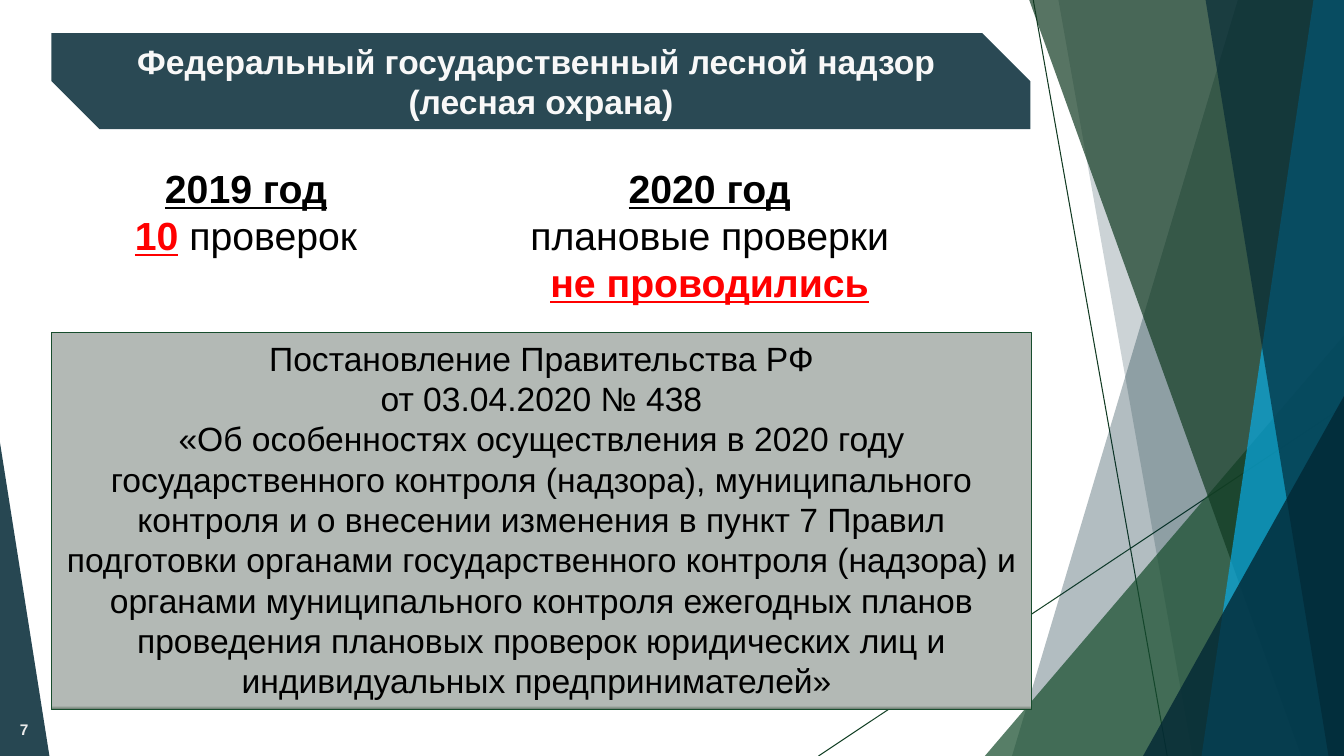
from dataclasses import dataclass

from lxml import etree
from pptx import Presentation
from pptx.dml.color import RGBColor as RGB
from pptx.enum.shapes import MSO_CONNECTOR as CONN, MSO_SHAPE as SHAPE
from pptx.enum.text import MSO_ANCHOR as ANCHOR, MSO_AUTO_SIZE as FIT, PP_ALIGN as ALIGN
from pptx.oxml.ns import qn
from pptx.util import Inches, Pt


@dataclass(frozen=True)
class Theme:
    font: str = "Arial"
    navy: str = "022734"
    green: str = "174D2D"
    deep: str = "113A22"
    mid: str = "144126"
    blue: str = "09ABE4"
    panel: str = "B3B9B5"
    panel_edge: str = "5F7264"
    ink: str = "000000"
    accent: str = "FF0000"
    pale: str = "F8F8F8"
    number: str = "EBEBEB"
    big: int = 28
    body: int = 24
    small: int = 11


def add_run(p, text, *, font, size, color, strong=False, underline=False):
    r = p.add_run()
    r.text = text
    r.font.name, r.font.size = font, Pt(size)
    r.font.bold, r.font.underline = strong, underline
    r.font.color.rgb = RGB.from_string(color)


class Deck:
    """Draws on one slide; every length is a percentage of the slide's size."""

    def __init__(self, theme):
        self.theme = theme
        self.prs = Presentation()
        self.prs.slide_width, self.prs.slide_height = Inches(13.33), Inches(7.5)
        self.slide = self.prs.slides.add_slide(self.prs.slide_layouts[6])
        self.shapes = self.slide.shapes

    def at(self, *shares):
        """Turn alternating horizontal and vertical shares into lengths."""
        sides = self.prs.slide_width, self.prs.slide_height
        return [round(share * sides[i % 2] / 100) for i, share in enumerate(shares)]

    def paint(self, sp, color, opacity):
        sp.shadow.inherit = False
        sp.line.fill.background()
        sp.fill.solid()
        sp.fill.fore_color.rgb = RGB.from_string(color)
        clr = sp._element.spPr.find(qn("a:solidFill"))[0]
        etree.SubElement(clr, qn("a:alpha"), val=str(opacity * 1000))

    def line(self, *ends, color):
        cxn = self.shapes.add_connector(CONN.STRAIGHT, *self.at(*ends))
        cxn.line.color.rgb = RGB.from_string(color)
        cxn.line.width = Pt(0.75)
        etree.SubElement(cxn._element.spPr, qn("a:effectLst"))

    def band(self, top, bottom, color, opacity):
        """Fill from a slanted left edge to the right side of the slide."""
        builder = self.shapes.build_freeform(*self.at(top, 0))
        corners = (100, 0), (100, 100), (bottom, 100)
        builder.add_line_segments([self.at(*c) for c in corners], close=True)
        self.paint(builder.convert_to_shape(), color, opacity)

    def shape(self, kind, *box, color, opacity, adjust):
        sp = self.shapes.add_shape(kind, *self.at(*box))
        for i, value in enumerate(adjust):
            sp.adjustments[i] = value
        self.paint(sp, color, opacity)
        return sp

    def panel(self, *box):
        t = self.theme
        sp = self.shapes.add_shape(SHAPE.RECTANGLE, *self.at(*box))
        sp.shadow.inherit = False
        sp.line.color.rgb = RGB.from_string(t.green)
        sp.line.width = Pt(1)
        sp.fill.gradient()
        sp.fill.gradient_angle = 270
        stops = (0.99, t.panel), (1, t.panel_edge)
        for stop, (position, color) in zip(sp.fill.gradient_stops, stops):
            stop.position = position
            stop.color.rgb = RGB.from_string(color)
        return sp

    def textbox(self, *box):
        return self.shapes.add_textbox(*self.at(*box))

    def put_text(self, sp, paragraphs, *, size, color, align=ALIGN.CENTER,
                 anchor=ANCHOR.TOP, fit=FIT.NONE, **style):
        """Each paragraph is a list of (text, format that differs) runs."""
        base = dict(font=self.theme.font, size=size, color=color, **style)
        tf = sp.text_frame
        tf.word_wrap, tf.auto_size, tf.vertical_anchor = True, fit, anchor
        for i, runs in enumerate(paragraphs):
            p = tf.add_paragraph() if i else tf.paragraphs[0]
            p.alignment = align
            for text, change in runs:
                add_run(p, text, **{**base, **change})


def draw_backdrop(deck):
    t = deck.theme

    def triangle(*box, color, opacity, apex=1):
        deck.shape(SHAPE.ISOSCELES_TRIANGLE, *box, color=color,
                   opacity=opacity, adjust=[apex])

    deck.line(76.88, 0, 86.85, 100, color=t.deep)
    deck.line(100, 53.73, 60.9, 100, color=t.mid)
    deck.band(92.1, 75.3, t.navy, 30)
    deck.band(78.75, 88.73, t.navy, 20)
    triangle(73.28, 44.4, 26.72, 55.6, color=t.green, opacity=72)
    deck.band(76.58, 96.83, t.deep, 70)
    deck.band(97.73, 89.4, t.blue, 70)
    deck.band(89.7, 98.85, t.navy, 65)
    triangle(85.05, 52.4, 14.95, 47.6, color=t.navy, opacity=80)
    triangle(0, 58.53, 3.68, 41.47, color=t.navy, opacity=85, apex=0)


def draw_content(deck):
    t = deck.theme
    head = dict(strong=True, underline=True)
    alert = dict(head, color=t.accent)

    title = deck.shape(SHAPE.SNIP_2_DIAG_RECTANGLE, 3.83, 4.4, 72.83, 12.67,
                       color=t.navy, opacity=84, adjust=[0, 0.5])
    deck.put_text(title, [[("Федеральный государственный лесной надзор ", {})],
                          [("(лесная охрана)", {})]],
                  size=t.body, color=t.pale, anchor=ANCHOR.MIDDLE, strong=True)

    years = [
        ((7.5, 21.07, 21.6, 13.87),
         [[("2019 год", head)], [("10", alert), (" проверок", {})]]),
        ((32.4, 21.07, 40.8, 20.13),
         [[("2020 год", head)], [("плановые проверки", {})],
          [("не проводились", alert)]]),
    ]
    for box, paragraphs in years:
        deck.put_text(deck.textbox(*box), paragraphs, size=t.big, color=t.ink,
                      fit=FIT.SHAPE_TO_FIT_TEXT)

    decree = [
        "Постановление Правительства РФ",
        "от 03.04.2020 № 438",
        "«Об особенностях осуществления в 2020 году государственного контроля "
        "(надзора), муниципального контроля и о внесении изменения в пункт 7 "
        "Правил подготовки органами государственного контроля (надзора) и "
        "органами муниципального контроля ежегодных планов проведения плановых "
        "проверок юридических лиц и индивидуальных предпринимателей» ",
    ]
    deck.put_text(deck.panel(3.83, 44, 72.9, 49.87),
                  [[(text, {})] for text in decree],
                  size=t.body, color=t.ink, fit=FIT.SHAPE_TO_FIT_TEXT)

    deck.put_text(deck.textbox(0, 93.87, 2.85, 5.33), [[("7", {})]], size=t.small,
                  color=t.number, align=ALIGN.RIGHT, anchor=ANCHOR.MIDDLE, strong=True)


def main():
    deck = Deck(Theme())
    draw_backdrop(deck)
    draw_content(deck)
    deck.prs.save("out.pptx")


if __name__ == "__main__":
    main()
